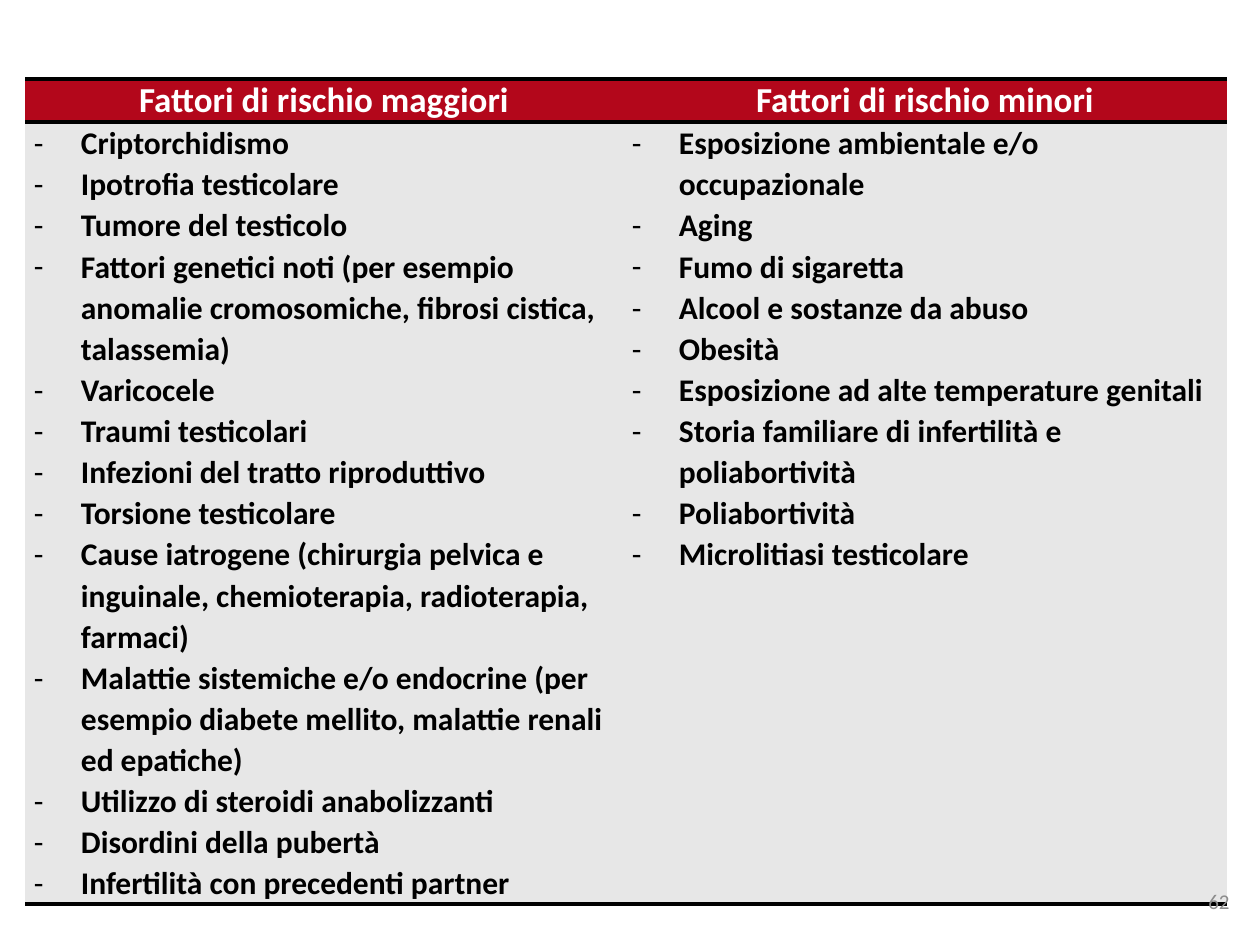
from dataclasses import dataclass

from lxml import etree
from pptx import Presentation
from pptx import util as u
from pptx.dml.color import RGBColor
from pptx.enum import text
from pptx.oxml.ns import qn

PX = u.Inches(1) / 126


def px(n):
    return u.Emu(round(n * PX))


@dataclass(frozen=True)
class Theme:
    font: str = "Calibri"
    header_fill: str = "B3071B"
    body_fill: str = "E7E7E7"
    header_text: str = "FFFFFF"
    body_text: str = "000000"
    rule: str = "000000"
    muted: str = "8C8C8C"
    header_size: int = 20
    body_size: int = 18
    number_size: int = 12
    rule_width: int = 2


def write(p, content, *, font, size, color, bold=False,
          align=text.PP_ALIGN.LEFT, spacing=None, after=0):
    p.alignment = align
    p.line_spacing = spacing
    p.space_after = u.Pt(after)
    r = p.add_run()
    r.text = content
    r.font.name = font
    r.font.size = u.Pt(size)
    r.font.bold = bold
    r.font.color.rgb = RGBColor.from_string(color)


def add_dash(p, indent):
    """Give the paragraph a dash bullet with a hanging indent."""
    ppr = p._p.get_or_add_pPr()
    ppr.set("marL", str(px(indent)))
    ppr.set("indent", str(-px(indent)))
    etree.SubElement(ppr, qn("a:buFont"), typeface="Calibri")
    etree.SubElement(ppr, qn("a:buChar"), char="-")


class SlideBuilder:
    def __init__(self, prs, theme):
        self.theme = theme
        self.slide = prs.slides.add_slide(prs.slide_layouts[6])

    def borders(self, cell):
        """Rule the top and bottom of a cell and clear its sides."""
        tcpr = cell._tc.get_or_add_tcPr()
        for i, side in enumerate(("lnL", "lnR", "lnT", "lnB")):
            ln = etree.Element(qn(f"a:{side}"), w=str(u.Pt(self.theme.rule_width)))
            if side in ("lnL", "lnR"):
                etree.SubElement(ln, qn("a:noFill"))
            else:
                fill = etree.SubElement(ln, qn("a:solidFill"))
                etree.SubElement(fill, qn("a:srgbClr"), val=self.theme.rule)
            tcpr.insert(i, ln)

    def cell(self, cell, fill):
        cell.fill.solid()
        cell.fill.fore_color.rgb = RGBColor.from_string(fill)
        cell.margin_left = cell.margin_right = px(9)
        cell.margin_top = cell.margin_bottom = 0
        self.borders(cell)
        return cell.text_frame

    def list_table(self, left, top, widths, heights, columns):
        """Draw one column per heading, with its dashed list below."""
        t = self.theme
        table = self.slide.shapes.add_table(
            2, len(columns), px(left), px(top), px(sum(widths)), px(sum(heights))).table
        table.first_row = table.horz_banding = False
        for row, height in zip(table.rows, heights):
            row.height = px(height)
        for c, (heading, items) in enumerate(columns.items()):
            table.columns[c].width = px(widths[c])
            tf = self.cell(table.cell(0, c), t.header_fill)
            write(tf.paragraphs[0], heading, font=t.font, size=t.header_size,
                  color=t.header_text, bold=True, align=text.PP_ALIGN.CENTER, after=6)
            tf = self.cell(table.cell(1, c), t.body_fill)
            for i, item in enumerate(items):
                p = tf.add_paragraph() if i else tf.paragraphs[0]
                add_dash(p, 47)
                write(p, item, font=t.font, size=t.body_size,
                      color=t.body_text, bold=True, spacing=1.07)

    def page_number(self, left, top, width, height, number):
        t = self.theme
        box = self.slide.shapes.add_textbox(px(left), px(top), px(width), px(height))
        tf = box.text_frame
        tf.word_wrap = True
        tf.vertical_anchor = text.MSO_ANCHOR.MIDDLE
        write(tf.paragraphs[0], number, font=t.font, size=t.number_size,
              color=t.muted, align=text.PP_ALIGN.RIGHT)


RISK_FACTORS = {
    "Fattori di rischio maggiori": [
        "Criptorchidismo",
        "Ipotrofia testicolare",
        "Tumore del testicolo",
        "Fattori genetici noti (per esempio anomalie cromosomiche, "
        "fibrosi cistica, talassemia)",
        "Varicocele",
        "Traumi testicolari",
        "Infezioni del tratto riproduttivo",
        "Torsione testicolare",
        "Cause iatrogene (chirurgia pelvica e inguinale, chemioterapia, "
        "radioterapia, farmaci)",
        "Malattie sistemiche e/o endocrine (per esempio diabete mellito, "
        "malattie renali ed epatiche)",
        "Utilizzo di steroidi anabolizzanti",
        "Disordini della pubertà",
        "Infertilità con precedenti partner",
    ],
    "Fattori di rischio minori": [
        "Esposizione ambientale e/o occupazionale",
        "Aging",
        "Fumo di sigaretta",
        "Alcool e sostanze da abuso",
        "Obesità",
        "Esposizione ad alte temperature genitali",
        "Storia familiare di infertilità e poliabortività",
        "Poliabortività",
        "Microlitiasi testicolare",
    ],
}


def main():
    prs = Presentation()
    prs.slide_width, prs.slide_height = px(1260), px(945)
    s = SlideBuilder(prs, Theme())
    s.list_table(25, 79, (598, 604), (43, 782), RISK_FACTORS)
    s.page_number(958, 876, 284, 50, "62")
    prs.save("out.pptx")


if __name__ == "__main__":
    main()
